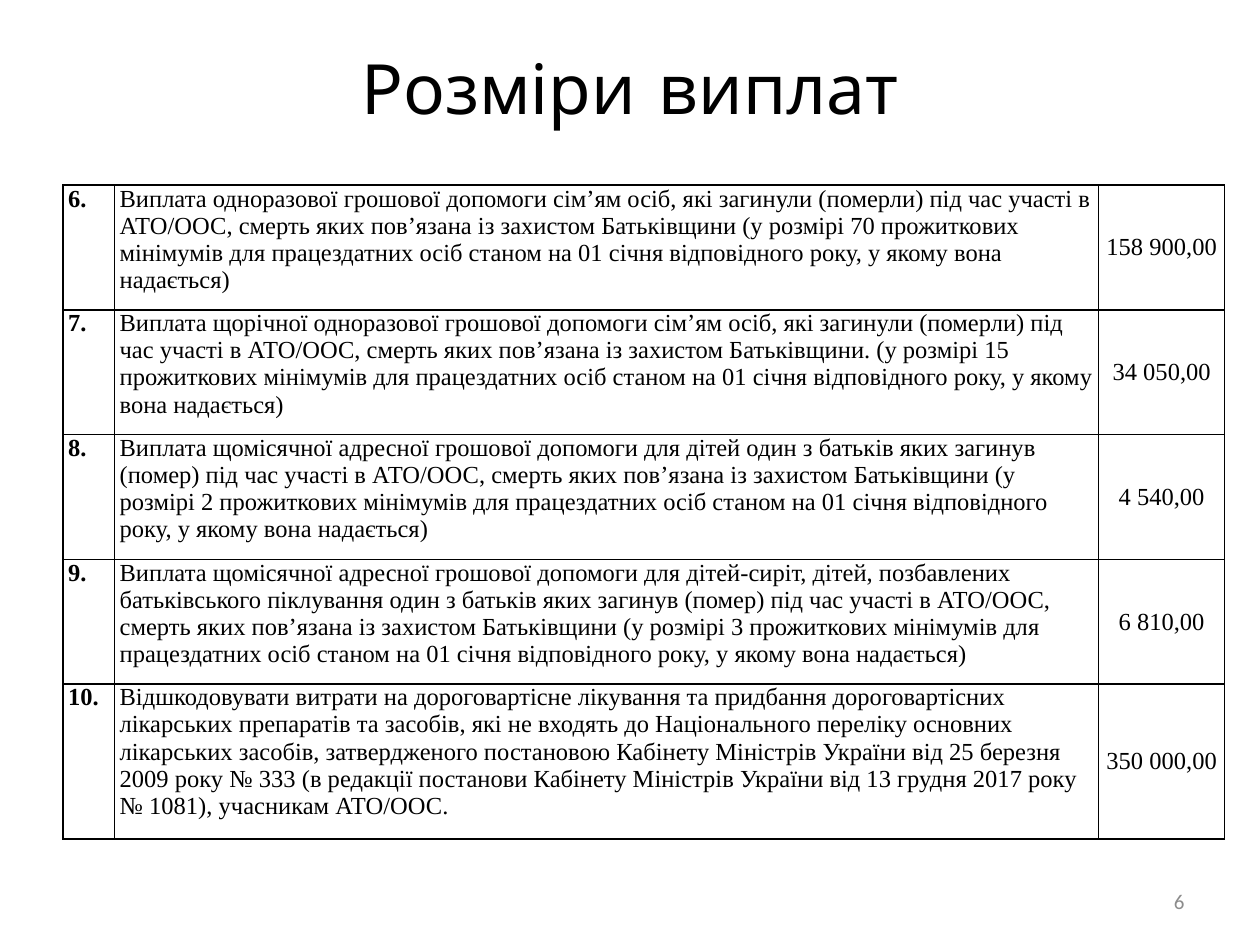
"""Build a slide with a table of payment amounts."""
from dataclasses import dataclass

import lxml.etree
import pptx
import pptx.dml.color
import pptx.enum.text
import pptx.oxml.ns
import pptx.util

BLACK = pptx.dml.color.RGBColor(0x00, 0x00, 0x00)
WHITE = pptx.dml.color.RGBColor(0xFF, 0xFF, 0xFF)
GREY = pptx.dml.color.RGBColor(0x8C, 0x8C, 0x8C)
ALIGN = pptx.enum.text.PP_ALIGN
ANCHOR = pptx.enum.text.MSO_ANCHOR
WIDE = pptx.util.Inches(10)
HIGH = pptx.util.Inches(7.5)
COLS = (0.041, 0.781, 0.1)
LINE = 0.032
SERIF = "Times New Roman"
WAR = "під час участі в АТО/ООС, смерть яких пов’язана із захистом Батьківщини"


@dataclass(frozen=True)
class Style:
    """Describe the look of one text."""

    font: str
    size: float
    align: ALIGN = ALIGN.LEFT
    anchor: ANCHOR = ANCHOR.MIDDLE
    color: pptx.dml.color.RGBColor = BLACK
    bold: bool = False


@dataclass(frozen=True)
class Label:
    """Place a text by shares of the slide."""

    text: str
    left: float
    top: float
    width: float
    height: float
    style: Style


@dataclass(frozen=True)
class Grant:
    """Hold one payment and its height in lines."""

    text: str
    sum: str
    lines: float = 4.125


STYLES = (
    Style(SERIF, 14, anchor=ANCHOR.TOP, bold=True),
    Style(SERIF, 14, anchor=ANCHOR.TOP),
    Style(SERIF, 14, ALIGN.CENTER),
)
LABELS = (
    Label("Розміри виплат", 0.05, 0.04, 0.9, 0.103, Style("Comic Neue", 39.6, ALIGN.CENTER)),
    Label("6", 0.717, 0.927, 0.233, 0.053, Style("Calibri", 12, ALIGN.RIGHT, color=GREY)),
)


def rate(count: int) -> str:
    """Word the size of a payment in living minimums."""
    return (
        f"(у розмірі {count} прожиткових мінімумів для працездатних осіб "
        "станом на 01 січня відповідного року, у якому вона надається)"
    )


GRANTS = (
    Grant(f"Виплата одноразової грошової допомоги сім’ям осіб, які загинули (померли) {WAR} {rate(70)}", "158 900,00"),
    Grant(
        f"Виплата щорічної одноразової грошової допомоги сім’ям осіб, які загинули (померли) {WAR}. {rate(15)}",
        "34 050,00",
    ),
    Grant(
        "Виплата щомісячної адресної грошової допомоги для дітей "
        f"один з батьків яких загинув (помер) {WAR} {rate(2)}",
        "4 540,00",
    ),
    Grant(
        "Виплата щомісячної адресної грошової допомоги для дітей-сиріт, дітей, позбавлених "
        f"батьківського піклування один з батьків яких загинув (помер) {WAR} {rate(3)}",
        "6 810,00",
    ),
    Grant(
        "Відшкодовувати витрати на дороговартісне лікування та придбання дороговартісних "
        "лікарських препаратів та засобів, які не входять до Національного переліку основних "
        "лікарських засобів, затвердженого постановою Кабінету Міністрів України від 25 березня "
        "2009 року № 333 (в редакції постанови Кабінету Міністрів України від 13 грудня 2017 року "
        "№ 1081), учасникам АТО/ООС.",
        "350 000,00",
        5.125,
    ),
)


def write(frame: pptx.text.text.TextFrame, text: str, style: Style) -> None:
    """Put styled text into a frame."""
    frame.text = text
    part = frame.paragraphs[0]
    part.alignment = style.align
    part.font.name = style.font
    part.font.size = pptx.util.Pt(style.size)
    part.font.bold = style.bold
    part.font.color.rgb = style.color


def add_label(slide: pptx.slide.Slide, label: Label) -> None:
    """Add a text box."""
    box = slide.shapes.add_textbox(
        int(label.left * WIDE), int(label.top * HIGH), int(label.width * WIDE), int(label.height * HIGH)
    )
    box.text_frame.word_wrap = True
    box.text_frame.vertical_anchor = label.style.anchor
    write(box.text_frame, label.text, label.style)


def add_edges(cell: pptx.table._Cell) -> None:
    """Draw thin black lines around a cell."""
    name = pptx.oxml.ns.qn
    props = cell._tc.get_or_add_tcPr()
    for place, side in enumerate(("a:lnL", "a:lnR", "a:lnT", "a:lnB")):
        edge = lxml.etree.Element(name(side), w=str(pptx.util.Pt(1)))
        fill = lxml.etree.SubElement(edge, name("a:solidFill"))
        lxml.etree.SubElement(fill, name("a:srgbClr"), val=str(BLACK))
        props.insert(place, edge)


def fill_cell(cell: pptx.table._Cell, text: str, style: Style) -> None:
    """Fill one cell of the table."""
    cell.margin_left = cell.margin_right = pptx.util.Inches(0.04)
    cell.margin_top = cell.margin_bottom = 0
    cell.vertical_anchor = style.anchor
    cell.fill.solid()
    cell.fill.fore_color.rgb = WHITE
    write(cell.text_frame, text, style)
    add_edges(cell)


def add_grid(slide: pptx.slide.Slide, grants: tuple[Grant, ...]) -> None:
    """Add the table of payments."""
    tall = sum(grant.lines for grant in grants) * LINE
    grid = slide.shapes.add_table(
        len(grants), len(COLS), int(0.05 * WIDE), int(0.196 * HIGH), int(sum(COLS) * WIDE), int(tall * HIGH)
    ).table
    grid.first_row = grid.horz_banding = False
    for col, share in zip(grid.columns, COLS):
        col.width = int(share * WIDE)
    for num, (row, grant) in enumerate(zip(grid.rows, grants), start=6):
        row.height = int(grant.lines * LINE * HIGH)
        for cell, text, style in zip(row.cells, (f"{num}.", grant.text, grant.sum), STYLES):
            fill_cell(cell, text, style)


def main() -> None:
    """Build and save the slide."""
    deck = pptx.Presentation()
    deck.slide_width, deck.slide_height = WIDE, HIGH
    slide = deck.slides.add_slide(deck.slide_layouts[6])
    for label in LABELS:
        add_label(slide, label)
    add_grid(slide, GRANTS)
    deck.save("out.pptx")


if __name__ == "__main__":
    main()
